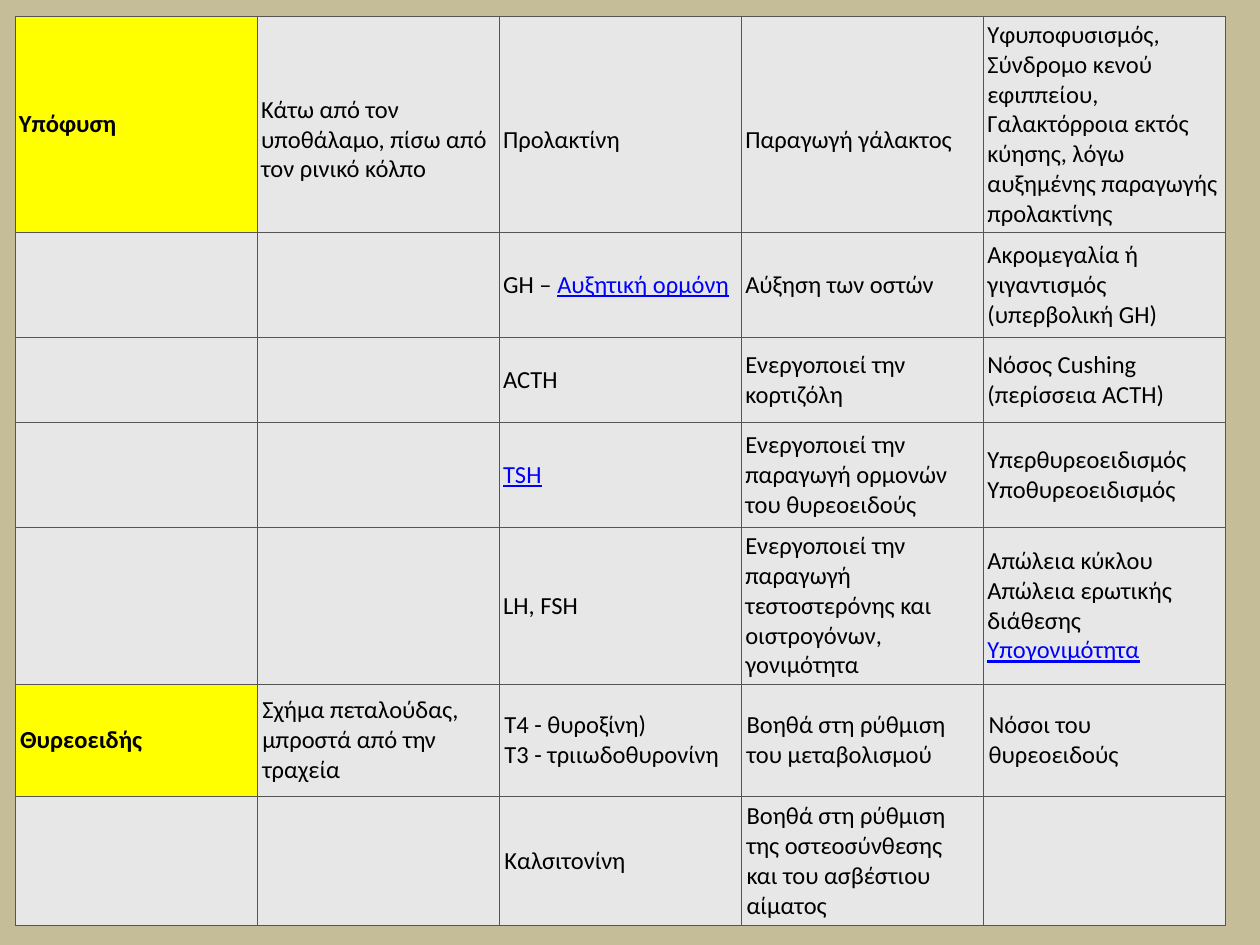
from lxml import etree
from pptx import Presentation
from pptx.dml.color import RGBColor
from pptx.enum.text import MSO_ANCHOR
from pptx.oxml.ns import qn
from pptx.util import Inches, Pt

MIDDLE = MSO_ANCHOR.MIDDLE
COLORS = {
    "page": "C4BD97",
    "organ": "FFFF00",
    "cell": "E7E7E7",
    "line": "555555",
    "text": "000000",
    "link": "0000FF",
}
LINKS = ("Αυξητική ορμόνη", "TSH", "Υπογονιμότητα")
LEAD = 0.24
HEIGHTS = (1.61, 0.83, 0.68, 0.83, 0.99, 0.89, 0.99)
ROWS = (
    (
        "Υπόφυση",
        "Κάτω από τον υποθάλαμο, πίσω από τον ρινικό κόλπο",
        "Προλακτίνη",
        "Παραγωγή γάλακτος",
        "Υφυποφυσισμός,\nΣύνδρομο κενού εφιππείου, Γαλακτόρροια εκτός κύησης, "
        "λόγω αυξημένης παραγωγής προλακτίνης",
    ),
    ("", "", "GH – Αυξητική ορμόνη", "Αύξηση των οστών",
     "Ακρομεγαλία ή γιγαντισμός (υπερβολική GH)"),
    ("", "", "ACTH", "Ενεργοποιεί την κορτιζόλη", "Νόσος Cushing (περίσσεια ACTH)"),
    ("", "", "TSH", "Ενεργοποιεί την παραγωγή ορμονών του θυρεοειδούς",
     "Υπερθυρεοειδισμός\nΥποθυρεοειδισμός"),
    (
        "",
        "",
        "LH, FSH",
        "Ενεργοποιεί την παραγωγή τεστοστερόνης και οιστρογόνων, γονιμότητα",
        "Απώλεια κύκλου\nΑπώλεια ερωτικής διάθεσης\nΥπογονιμότητα",
    ),
    (
        "Θυρεοειδής",
        "Σχήμα πεταλούδας, μπροστά από την τραχεία",
        "T4 - θυροξίνη)\nT3 - τριιωδοθυρονίνη",
        "Βοηθά στη ρύθμιση του μεταβολισμού",
        "Νόσοι του θυρεοειδούς",
    ),
    ("", "", "Καλσιτονίνη",
     "Βοηθά στη ρύθμιση της οστεοσύνθεσης και του ασβέστιου αίματος", ""),
)


def paint(fill, name):
    """Fill solidly with a named colour."""
    fill.solid()
    fill.fore_color.rgb = RGBColor.from_string(COLORS[name])


def add_borders(cell):
    """Draw a thin line on all four sides of a cell."""
    props = cell._tc.get_or_add_tcPr()
    for index, side in enumerate(("lnL", "lnR", "lnT", "lnB")):
        line = etree.Element(qn(f"a:{side}"), w=str(Pt(0.75)))
        solid = etree.SubElement(line, qn("a:solidFill"))
        etree.SubElement(solid, qn("a:srgbClr"), val=COLORS["line"])
        props.insert(index, line)


def add_run(para, text):
    """Add a run, styled as a link when its text is a linked term."""
    run = para.add_run()
    run.text = text
    if text in LINKS:
        run.font.underline = True
        run.font.color.rgb = RGBColor.from_string(COLORS["link"])


def write_text(cell, text, bold):
    """Write lines of text, splitting off a linked term at a line end."""
    para = cell.text_frame.paragraphs[0]
    font = para.font
    font.name, font.size, font.bold = "Calibri", Pt(14), bold
    font.color.rgb = RGBColor.from_string(COLORS["text"])
    for index, line in enumerate(text.split("\n")):
        if index:
            para.add_line_break()
        link = next((term for term in LINKS if line.endswith(term)), "")
        for part in (line.removesuffix(link), link):
            if part:
                add_run(para, part)


def style_cell(cell, text, inset, lead, organ):
    """Set the fill, borders, margins and text of a cell."""
    paint(cell.fill, "organ" if organ else "cell")
    add_borders(cell)
    cell.vertical_anchor = MIDDLE
    cell.margin_left = cell.margin_right = cell.margin_bottom = Inches(inset)
    cell.margin_top = Inches(inset + lead)
    if text:
        write_text(cell, text, organ)


def add_hormones(slide):
    """Add the table of glands, hormones, actions and disorders."""
    frame = slide.shapes.add_table(
        len(ROWS), len(ROWS[0]), Inches(0.12), Inches(0.13), Inches(9.61), Inches(7.15)
    )
    table = frame.table
    table.first_row = table.horz_banding = False
    for r, (height, texts) in enumerate(zip(HEIGHTS, ROWS)):
        table.rows[r].height = Inches(height)
        inset = 0.03 if r < 5 else 0.04
        for c, text in enumerate(texts):
            lead = LEAD if r == 0 and c in (1, 2, 3) else 0
            style_cell(table.cell(r, c), text, inset, lead, c == 0 and bool(text))
    frame.height = Inches(7.15)


def main():
    """Build and save the slide."""
    deck = Presentation()
    deck.slide_width, deck.slide_height = Inches(10), Inches(7.5)
    slide = deck.slides.add_slide(deck.slide_layouts[6])
    paint(slide.background.fill, "page")
    add_hormones(slide)
    deck.save("out.pptx")


if __name__ == "__main__":
    main()
